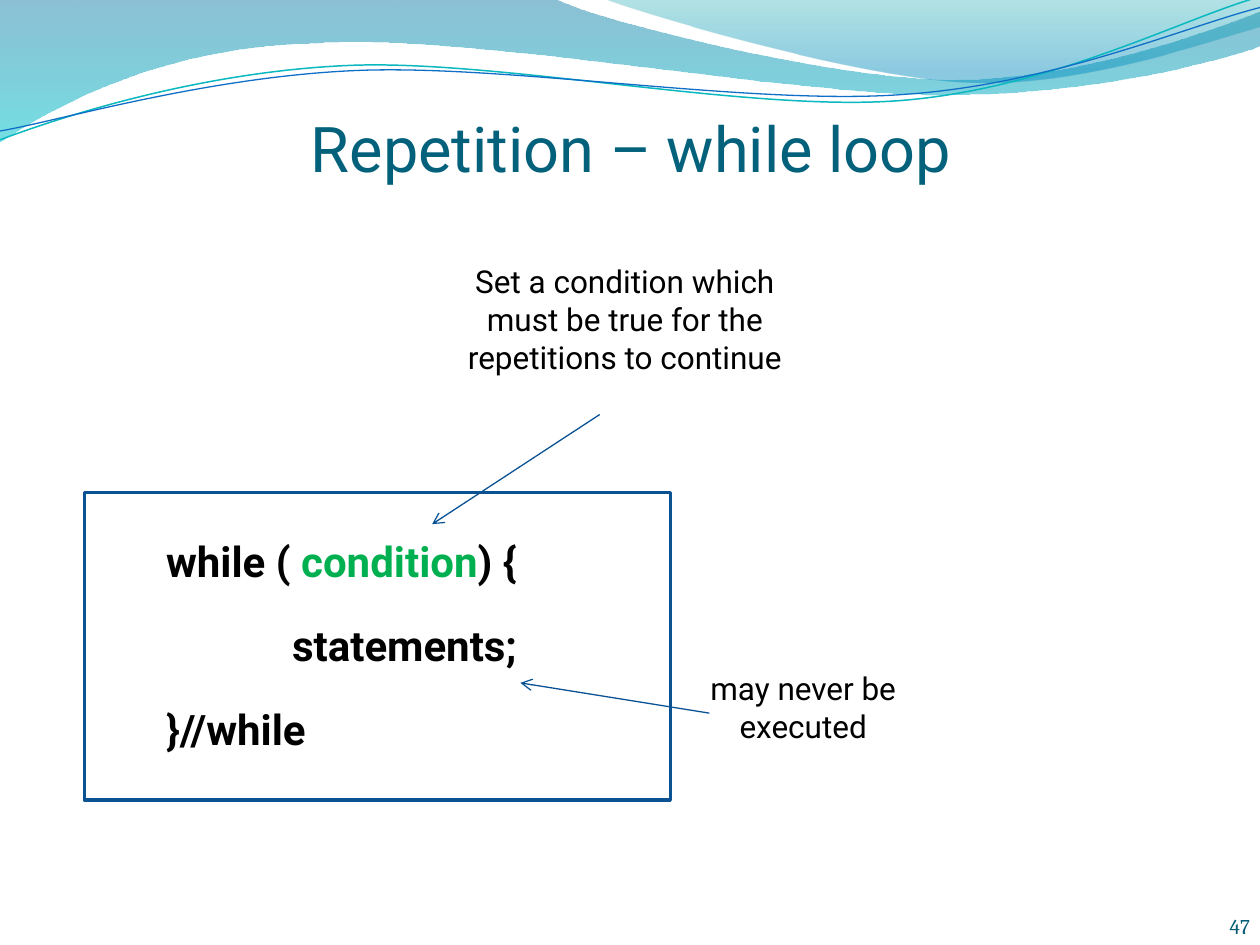
from lxml.etree import SubElement
from pptx import Presentation
from pptx.dml.color import RGBColor
from pptx.enum.shapes import MSO_CONNECTOR, MSO_SHAPE
from pptx.enum.text import MSO_ANCHOR, PP_ALIGN
from pptx.oxml.ns import qn
from pptx.util import Inches, Pt


def color(value):
    return RGBColor.from_string(value)


class SlideWriter:
    """Holds the style and the current slide, and adds elements to it."""

    font = "Roboto"
    black = "000000"
    arrow_color = "095295"

    def __init__(self, slide):
        self.slide = slide

    def freeform(self, start, segments, closed):
        points = [(Inches(x), Inches(y))
                  for segment in [start, *segments]
                  for x, y in zip(segment[::2], segment[1::2])]
        builder = self.slide.shapes.build_freeform(*points[0], scale=1.0)
        builder.add_line_segments(points[1:], close=closed)
        shape = builder.convert_to_shape()
        shape.shadow.inherit = False
        lines = list(shape.element.spPr.iter(qn("a:lnTo")))
        for segment in segments:
            count = len(segment) // 2
            parts, lines = lines[:count], lines[count:]
            if count == 3:
                parts[0].tag = qn("a:cubicBezTo")
                for part in parts[1:]:
                    parts[0].append(part[0])
                    part.getparent().remove(part)
        return shape

    def wave(self, start, segments, stops):
        shape = self.freeform(start, segments, True)
        shape.line.fill.background()
        shape.fill.gradient()
        shape.fill.gradient_angle = 270
        for gradient_stop, (position, value, _) in zip(shape.fill.gradient_stops, stops):
            gradient_stop.position = position
            gradient_stop.color.rgb = color(value)
        for element, (_, _, opacity) in zip(shape.element.spPr.iter(qn("a:srgbClr")), stops):
            SubElement(element, qn("a:alpha"), val=str(opacity * 1000))

    def curve(self, start, segments, value, width):
        shape = self.freeform(start, segments, False)
        shape.fill.background()
        shape.line.color.rgb = color(value)
        shape.line.width = Pt(width)

    def text(self, box, runs, size, font=None, align=PP_ALIGN.CENTER,
             anchor=MSO_ANCHOR.TOP, margins=(0.1, 0.05, 0.1, 0.05)):
        shape = self.slide.shapes.add_textbox(*map(Inches, box))
        frame = shape.text_frame
        frame.word_wrap = True
        frame.vertical_anchor = anchor
        (frame.margin_left, frame.margin_top,
         frame.margin_right, frame.margin_bottom) = map(Inches, margins)
        self.fill_paragraph(frame.paragraphs[0], runs, size, font, align)

    def fill_paragraph(self, paragraph, runs, size, font=None, align=PP_ALIGN.LEFT, bold=False):
        paragraph.alignment = align
        for content, value in runs:
            run = paragraph.add_run()
            run.text = content
            run.font.name = font or self.font
            run.font.size = Pt(size)
            run.font.bold = bold
            run.font.color.rgb = color(value)

    def code(self, box, lines, size, indent):
        frame = self.slide.shapes.add_textbox(*map(Inches, box)).text_frame
        frame.word_wrap = True
        for index, runs in enumerate(lines):
            paragraph = frame.add_paragraph() if index else frame.paragraphs[0]
            paragraph.line_spacing = 1.5
            paragraph.space_before = Pt(4.8)
            self.fill_paragraph(paragraph, runs, size, bold=True)
            properties = paragraph._p.get_or_add_pPr()
            properties.set("marL", str(Inches(indent)))
            properties.set("indent", "0")

    def arrow(self, start, end):
        connector = self.slide.shapes.add_connector(
            MSO_CONNECTOR.STRAIGHT, *map(Inches, start + end))
        connector.line.color.rgb = color(self.arrow_color)
        connector.line.width = Pt(0.75)
        properties = connector.element.spPr
        SubElement(properties.find(qn("a:ln")), qn("a:tailEnd"), type="arrow")
        SubElement(properties, qn("a:effectLst"))

    def frame(self, box, value, width):
        shape = self.slide.shapes.add_shape(MSO_SHAPE.RECTANGLE, *map(Inches, box))
        shape.shadow.inherit = False
        shape.fill.background()
        shape.line.color.rgb = color(value)
        shape.line.width = Pt(width)


def main():
    presentation = Presentation()
    presentation.slide_width = Inches(10)
    presentation.slide_height = Inches(7.5)
    writer = SlideWriter(presentation.slides.add_slide(presentation.slide_layouts[6]))

    writer.wave(
        (0, 0),
        [(4.4, -0.01), (4.76, 0.17, 6.64, 0.63, 7.58, 0.63),
         (8.53, 0.63, 9.58, 0.26, 10, 0.09), (10.01, 0.36),
         (9.83, 0.44, 8.7, 0.76, 7.46, 0.75), (6.22, 0.75, 3.82, 0.28, 2.57, 0.34),
         (1.29, 0.36, 0.46, 0.83, -0.01, 1.13)],
        [(0, "0074A1", 45), (1, "00C6CF", 55)])
    writer.wave(
        (4.79, -0.01),
        [(5.09, 0.11, 6.82, 0.62, 7.69, 0.65), (8.56, 0.69, 9.61, 0.32, 10, 0.21), (10, 0)],
        [(0, "00A1A9", 30), (0.8, "008BBF", 45)])
    writer.curve(
        (0, 1.11),
        [(0.48, 0.93, 1.58, 0.57, 2.77, 0.52), (3.95, 0.47, 5.93, 0.89, 7.13, 0.8),
         (8.33, 0.71, 9.38, 0.15, 9.98, -0.02)],
        "0AB8BF", 0.85)
    writer.curve(
        (0, 1.04),
        [(0.47, 0.96, 1.64, 0.61, 2.83, 0.56), (4.03, 0.51, 5.97, 0.84, 7.17, 0.75),
         (8.36, 0.67, 9.41, 0.21, 10, 0.06)],
        "0F6FC6", 0.75)

    black = writer.black
    writer.text((0.51, 0.62, 9, 0.85), [("Repetition – while loop", "04617B")], 36,
                anchor=MSO_ANCHOR.BOTTOM, margins=(0, 0.05, 0, 0))
    writer.code(
        (0.43, 4, 9, 2.66),
        [[("while ( ", black), ("condition", "00B050"), (") {", black)],
         [("\t\tstatements;", black)],
         [("}//while", black)]],
        24, 0.79)
    writer.text((9.09, 7.05, 0.83, 0.4), [("47", "045D75")], 12, "Cambria",
                PP_ALIGN.RIGHT, MSO_ANCHOR.BOTTOM, (0, 0, 0, 0))
    writer.text((3.58, 2.03, 2.76, 1.31),
                [("Set a condition which must be true for the repetitions to continue", black)], 18)
    writer.arrow((4.76, 3.29), (3.43, 4.16))
    writer.text((5.31, 5.26, 2.13, 0.71), [("may never be executed", black)], 18)
    writer.arrow((5.63, 5.66), (4.13, 5.42))
    writer.frame((0.67, 3.91, 4.65, 2.44), "0B5292", 2)
    presentation.save("out.pptx")


if __name__ == "__main__":
    main()
